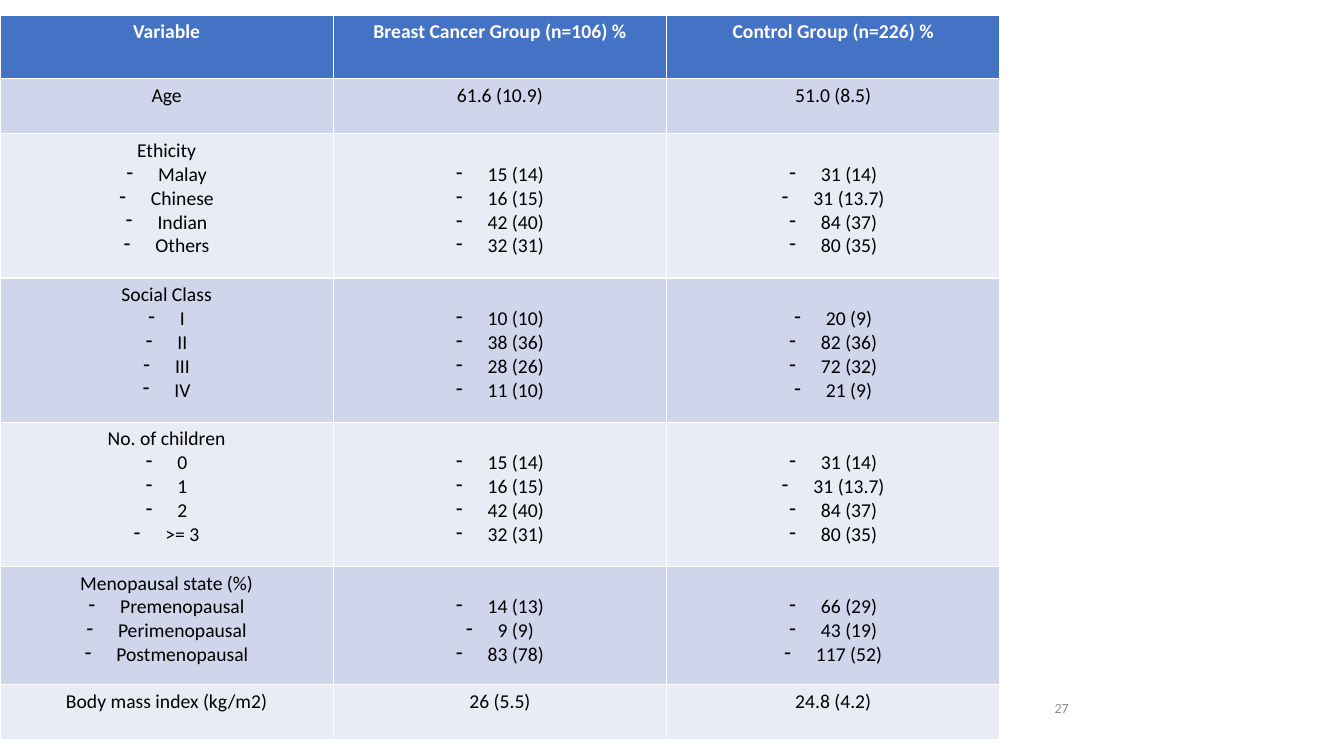
from lxml.etree import SubElement
from pptx import Presentation
from pptx.dml.color import RGBColor
from pptx.enum.text import MSO_ANCHOR as Anchor, PP_ALIGN as Align
from pptx.oxml.ns import qn
from pptx.util import Pt

WHITE = RGBColor(0xFF, 0xFF, 0xFF)
BLACK = RGBColor(0, 0, 0)
GREY = RGBColor(0x8C, 0x8C, 0x8C)
BLUE = RGBColor(0x44, 0x72, 0xC4)
BANDS = RGBColor(0xE9, 0xEB, 0xF5), RGBColor(0xCF, 0xD5, 0xEA)
FONT = "Calibri"
LINE = 17.1  # height of one line of table text
PADDING = 3.6
INDENT = 22.5

HEADINGS = ["Variable", "Breast Cancer Group (n=106) %", "Control Group (n=226) %"]
# Row height, then one cell per column: a string, or a heading with its list
ROWS = [
    (45.2, HEADINGS),
    (39.6, ["Age", "61.6 (10.9)", "51.0 (8.5)"]),
    (103, [("Ethicity", ["Malay", "Chinese", "Indian", "Others"]),
           ("", ["15 (14)", "16 (15)", "42 (40)", "32 (31)"]),
           ("", ["31 (14)", "31 (13.7)", "84 (37)", "80 (35)"])]),
    (103, [("Social Class", ["I", "II", "III", "IV"]),
           ("", ["10 (10)", "38 (36)", "28 (26)", "11 (10)"]),
           ("", ["20 (9)", "82 (36)", "72 (32)", "21 (9)"])]),
    (103, [("No. of children", ["0", "1", "2", ">= 3"]),
           ("", ["15 (14)", "16 (15)", "42 (40)", "32 (31)"]),
           ("", ["31 (14)", "31 (13.7)", "84 (37)", "80 (35)"])]),
    (84.4, [("Menopausal state (%)", ["Premenopausal", "Perimenopausal", "Postmenopausal"]),
            ("", ["14 (13)", "9 (9)", "83 (78)"]),
            ("", ["66 (29)", "43 (19)", "117 (52)"])]),
    (39.6, ["Body mass index (kg/m2)", "26 (5.5)", "24.8 (4.2)"]),
]
TABLE_TOP, COLUMN_WIDTH = 10.8, 238.1
PAGE_NUMBER = "27"


def write(paragraph, text, size, color, align=Align.CENTER, bold=False, dash=False):
    paragraph.text = text
    paragraph.alignment = align
    if dash:
        properties = paragraph._p.get_or_add_pPr()
        properties.set("marL", str(Pt(INDENT)))
        properties.set("indent", str(-Pt(INDENT)))
        SubElement(properties, qn("a:buChar")).set("char", "-")
    font = paragraph.font
    font.name, font.size, font.bold = FONT, Pt(size), bold
    font.color.rgb = color


def fill_cell(cell, content, is_header, band):
    heading, items = (content, []) if isinstance(content, str) else content
    cell.fill.solid()
    cell.fill.fore_color.rgb = BLUE if is_header else band
    # A list without a heading starts level with the first item beside it
    cell.margin_top = Pt(PADDING if heading else PADDING + LINE)
    lines = [(heading, False)] if heading else []
    lines += [(item, True) for item in items]
    for index, (text, dash) in enumerate(lines):
        frame = cell.text_frame
        paragraph = frame.add_paragraph() if index else frame.paragraphs[0]
        write(paragraph, text, 14, WHITE if is_header else BLACK,
              bold=is_header, dash=dash)


deck = Presentation()
deck.slide_width, deck.slide_height = Pt(960), Pt(540)
slide = deck.slides.add_slide(deck.slide_layouts[6])

page = slide.shapes.add_textbox(Pt(637.2), Pt(494), Pt(133.2), Pt(23)).text_frame
page.word_wrap = True
page.vertical_anchor = Anchor.MIDDLE
write(page.paragraphs[0], PAGE_NUMBER, 10, GREY, Align.RIGHT)

table = slide.shapes.add_table(
    len(ROWS), len(HEADINGS), 0, Pt(TABLE_TOP),
    Pt(COLUMN_WIDTH * len(HEADINGS)), Pt(sum(height for height, _ in ROWS))).table
for column in table.columns:
    column.width = Pt(COLUMN_WIDTH)
for number, (height, contents) in enumerate(ROWS):
    table.rows[number].height = Pt(height)
    for cell, content in zip(table.rows[number].cells, contents):
        fill_cell(cell, content, number == 0, BANDS[number % 2])

deck.save("out.pptx")
